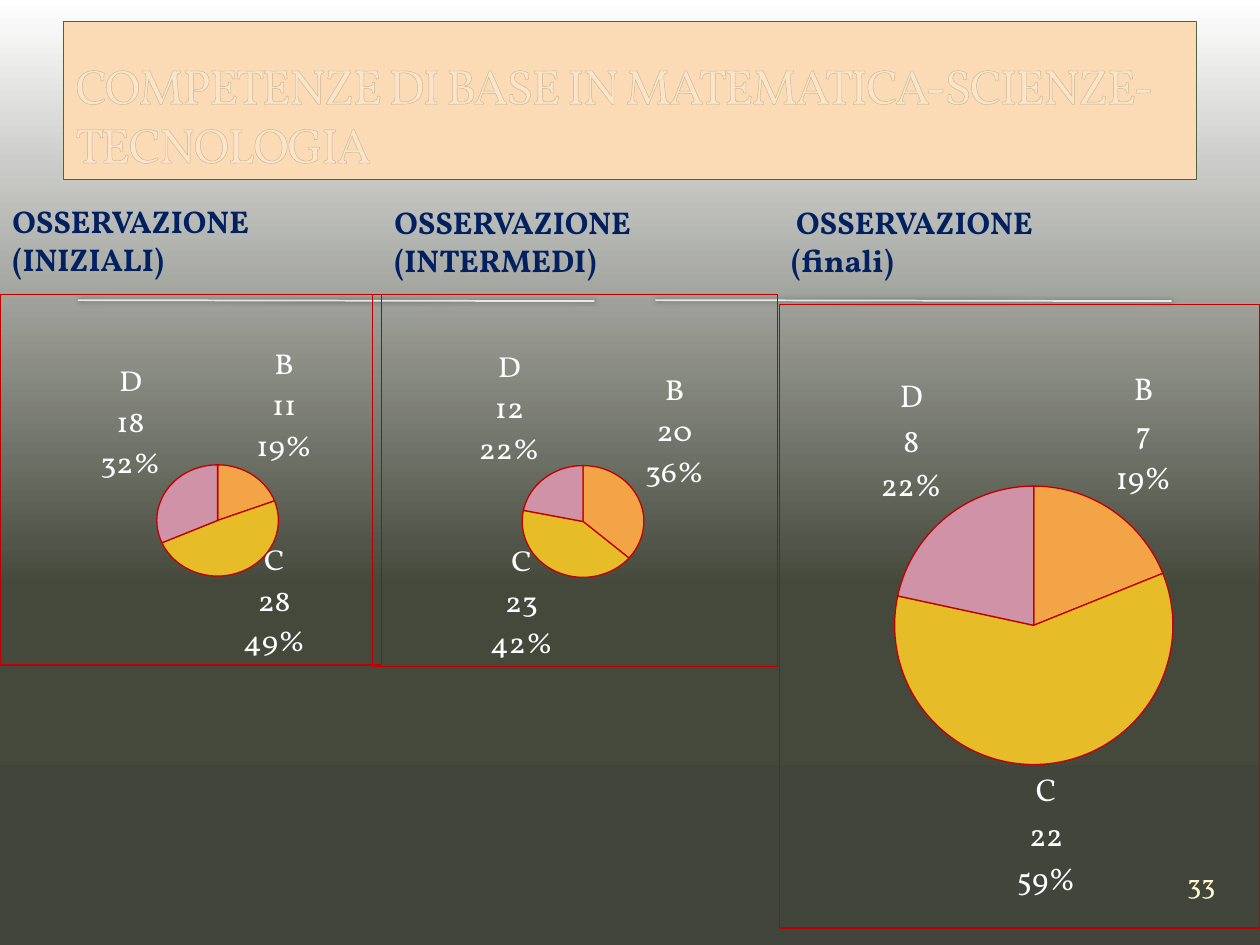
"""Build the slide comparing three observation rounds with pie charts."""
import copy

import lxml.etree
import pptx
import pptx.chart.data
import pptx.dml.color
import pptx.enum.chart
import pptx.enum.shapes
import pptx.enum.text
import pptx.oxml
import pptx.oxml.ns
import pptx.util

Cm = pptx.util.Cm
Pt = pptx.util.Pt
RGB = pptx.dml.color.RGBColor
qn = pptx.oxml.ns.qn
NS = pptx.oxml.ns.nsdecls("a", "c")

WHITE = RGB(0xFF, 0xFF, 0xFF)
NAVY = RGB(0x00, 0x20, 0x60)
CREAM = RGB(0xFE, 0xFA, 0xC9)
PEACH = RGB(0xFA, 0xDB, 0xB5)
OLIVE = RGB(0x53, 0x61, 0x42)
RULE = RGB(0xE9, 0xE9, 0xE8)
RED = RGB(0xC0, 0x00, 0x00)
SLICES = [RGB(0xA5, 0xB5, 0x92), RGB(0xF3, 0xA4, 0x47), RGB(0xE7, 0xBC, 0x29), RGB(0xD0, 0x92, 0xA7)]
BACKDROP = [(0, WHITE), (0.62, RGB(0x45, 0x49, 0x3C)), (1, RGB(0x42, 0x45, 0x3B))]

TITLE_FONT = {"name": "Vollkorn", "size": Pt(28), "bold": False}
HEAD_FONT = {"name": "Vollkorn", "size": Pt(18), "bold": True}
LABEL_FONT = {"name": "Vollkorn", "size": Pt(18), "bold": False}
NUMBER_FONT = {"name": "Vollkorn", "size": Pt(16), "bold": False}


def style(font, values, color):
    for key, value in values.items():
        setattr(font, key, value)
    font.color.rgb = color


def write(tf, lines, values, color, anchor):
    tf.word_wrap = True
    tf.vertical_anchor = anchor
    for i, line in enumerate(lines):
        p = tf.add_paragraph() if i else tf.paragraphs[0]
        p.alignment = pptx.enum.text.PP_ALIGN.LEFT
        r = p.add_run()
        r.text = line
        style(r.font, values, color)


prs = pptx.Presentation()
prs.slide_width, prs.slide_height = Cm(25.4), Cm(19.05)
s = prs.slides.add_slide(prs.slide_layouts[6])
BOTTOM = pptx.enum.text.MSO_ANCHOR.BOTTOM
MIDDLE = pptx.enum.text.MSO_ANCHOR.MIDDLE

fill = s.background.fill
fill.gradient()
fill.gradient_angle = 270
stops = next(s.element.iter(qn("a:gsLst")))
stops.insert(1, copy.deepcopy(stops[0]))
for stop, (position, color) in zip(fill.gradient_stops, BACKDROP):
    stop.position = position
    stop.color.rgb = color

for left in (1.57, 13.21):
    rule = s.shapes.add_connector(
        pptx.enum.shapes.MSO_CONNECTOR.STRAIGHT, Cm(left), Cm(6.05), Cm(left + 10.41), Cm(6.07))
    rule.line.color.rgb = RULE
    rule.line.width = Pt(1)
    rule.element.spPr.append(pptx.oxml.parse_xml(
        f'<a:effectLst {NS}><a:outerShdw blurRad="35560" dist="0" dir="2700000">'
        '<a:srgbClr val="000000"><a:alpha val="55000"/></a:srgbClr></a:outerShdw></a:effectLst>'))

sp = s.shapes.add_textbox(Cm(23.37), Cm(17.17), Cm(1.7), Cm(1.27))
tf = sp.text_frame
for side in ("left", "top", "right", "bottom"):
    setattr(tf, f"margin_{side}", 0)
write(tf, ["33"], NUMBER_FONT, CREAM, MIDDLE)
tf.paragraphs[0].alignment = pptx.enum.text.PP_ALIGN.CENTER

sp = s.shapes.add_shape(
    pptx.enum.shapes.MSO_SHAPE.RECTANGLE, Cm(1.27), Cm(0.43), Cm(22.86), Cm(3.18))
sp.shadow.inherit = False
sp.fill.solid()
sp.fill.fore_color.rgb = PEACH
sp.line.color.rgb = OLIVE
sp.line.width = Pt(0.5)
tf = sp.text_frame
write(tf, ["COMPETENZE DI BASE IN MATEMATICA-SCIENZE-TECNOLOGIA"], TITLE_FONT, WHITE, BOTTOM)
rPr = tf.paragraphs[0].runs[0].font._element
rPr.set("spc", "-100")
rPr.insert(0, pptx.oxml.parse_xml(
    f'<a:ln {NS} w="3175"><a:solidFill><a:srgbClr val="3C4422">'
    '<a:alpha val="25000"/></a:srgbClr></a:solidFill></a:ln>'))

HEADINGS = [
    ("(INIZIALI)", 0, 5.69, 1.78, 0),
    ("(INTERMEDI)", 7.7, 7.01, 1.8, 0),
    ("(finali)", 15.7, 9.4, 1.8, 0.1),
]
for phase, left, width, height, indent in HEADINGS:
    sp = s.shapes.add_textbox(Cm(left), Cm(3.94), Cm(width), Cm(height))
    write(sp.text_frame, ["OSSERVAZIONE", phase], HEAD_FONT, NAVY, BOTTOM)
    pPr = sp.text_frame.paragraphs[0]._p.get_or_add_pPr()
    pPr.set("indent", str(Cm(indent)))

PIES = [
    ((0, 11, 28, 18), (0, 5.92, 7.7, 8.2), (0.41, 0.46, 0.32, 0.3)),
    ((0, 20, 23, 12), (7.49, 5.92, 8.2, 8.2), (0.37, 0.46, 0.3, 0.3)),
    ((0, 7, 22, 8), (15.7, 6.12, 9.7, 12.6), (0.24, 0.29, 0.58, 0.45)),
]
for values, box, plot_box in PIES:
    data = pptx.chart.data.CategoryChartData()
    data.categories = ["A", "B", "C", "D"]
    data.add_series("Series 1", values)
    chart = s.shapes.add_chart(
        pptx.enum.chart.XL_CHART_TYPE.PIE, *[Cm(n) for n in box], data).chart
    chart.has_title = False
    chart.has_legend = False
    style(chart.font, LABEL_FONT, WHITE)
    plot = chart.plots[0]
    plot.vary_by_categories = True
    series = plot.series[0]
    for i, color in enumerate(SLICES):
        fmt = series.points[i].format
        fmt.fill.solid()
        fmt.fill.fore_color.rgb = color
        fmt.line.color.rgb = RED
        fmt.line.width = Pt(0.75)

    labels = series.data_labels
    flags = {
        "show_value": True, "show_percentage": True, "show_category_name": True,
        "position": pptx.enum.chart.XL_LABEL_POSITION.OUTSIDE_END,
    }
    for key, value in flags.items():
        setattr(labels, key, value)
    style(labels.font, LABEL_FONT, WHITE)
    dLbls = labels._element
    dLbls.insert(0, pptx.oxml.parse_xml(
        f'<c:dLbl {NS}><c:idx val="0"/><c:delete val="1"/></c:dLbl>'))
    separator = lxml.etree.Element(qn("c:separator"))
    separator.text = "\n"
    dLbls.find(qn("c:showBubbleSize")).addnext(separator)

    space = chart._chartSpace
    area = next(space.iter(qn("c:plotArea")))
    for old in area.findall(qn("c:layout")):
        area.remove(old)
    sizes = "".join(f'<c:{k} val="{v}"/>' for k, v in zip("xywh", plot_box))
    area.insert(0, pptx.oxml.parse_xml(
        f'<c:layout {NS}><c:manualLayout><c:layoutTarget val="inner"/><c:xMode val="edge"/>'
        f'<c:yMode val="edge"/>{sizes}</c:manualLayout></c:layout>'))
    space.find(qn("c:chart")).addnext(pptx.oxml.parse_xml(
        f'<c:spPr {NS}><a:noFill/><a:ln w="9525"><a:solidFill>'
        f'<a:srgbClr val="{RED}"/></a:solidFill></a:ln></c:spPr>'))

prs.save("out.pptx")
